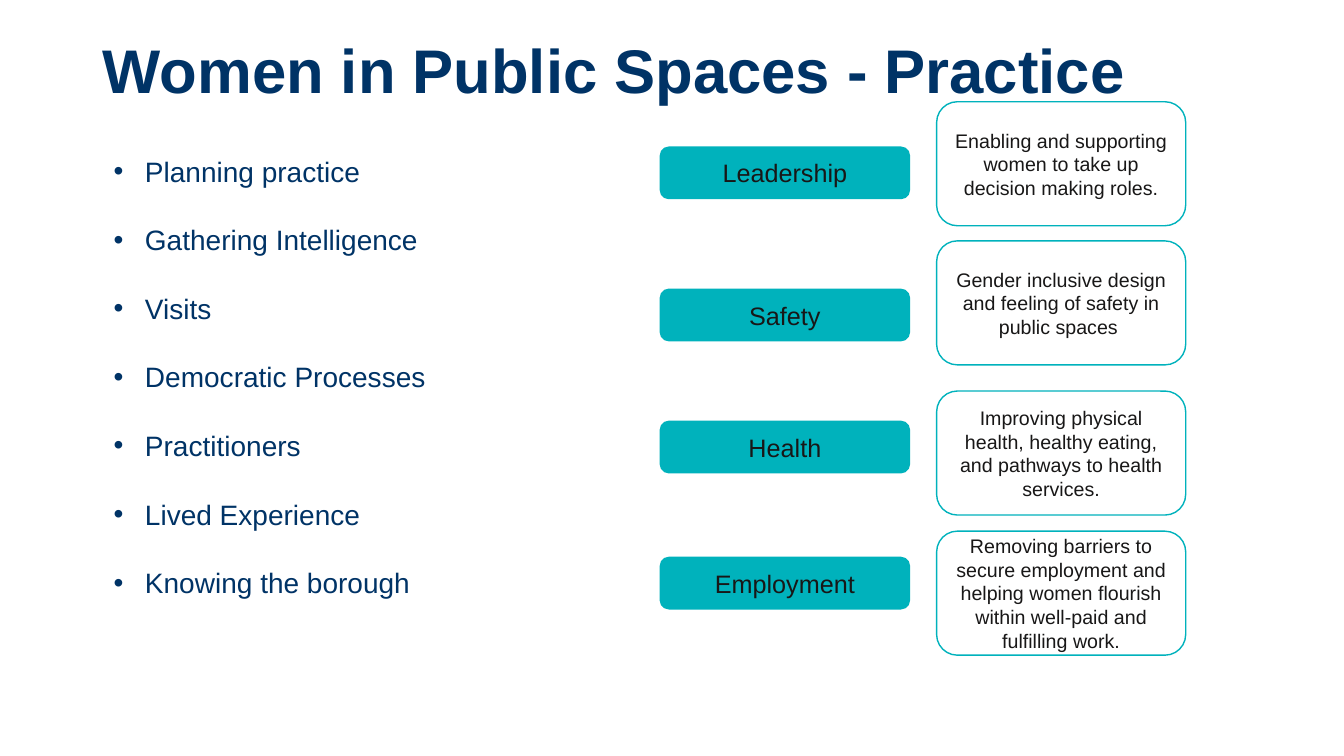
from dataclasses import dataclass

from lxml import etree
from pptx import Presentation
from pptx import util as u
from pptx.dml.color import RGBColor
from pptx.enum import shapes, text
from pptx.oxml.ns import qn

FONT = "Arial"
NAVY, TEAL, INK = "003366", "00B2BC", "181717"
LABEL_X, DETAIL_X, BOX_W = 6.55, 9.29, 2.47
LABEL_H, DETAIL_H = 0.51, 1.23


@dataclass(frozen=True)
class Theme:
    label: str
    label_top: float
    detail: str
    detail_top: float


THEMES = [
    Theme("Leadership", 1.46,
          "Enabling and supporting women to take up decision making roles.", 1.01),
    Theme("Safety", 2.87,
          "Gender inclusive design and feeling of safety in public spaces ", 2.39),
    Theme("Health", 4.18,
          "Improving physical health, healthy eating, and pathways to health services.", 3.88),
    Theme("Employment", 5.53,
          "Removing barriers to secure employment and helping women flourish "
          "within well-paid and fulfilling work.", 5.27),
]

PRACTICES = [
    "Planning practice", "Gathering Intelligence", "Visits", "Democratic Processes",
    "Practitioners", "Lived Experience", "Knowing the borough",
]


def rgb(color: str) -> RGBColor:
    return RGBColor.from_string(color)


def style_text(p, size: float, color: str, bold: bool = False) -> None:
    for r in p.runs:
        r.font.name = FONT
        r.font.size = u.Pt(size)
        r.font.bold = bold
        r.font.color.rgb = rgb(color)


def add_bullet(p, indent: float) -> None:
    """Give the paragraph a round bullet with a hanging indent."""
    pPr = p._p.get_or_add_pPr()
    pPr.set("marL", str(u.Inches(indent)))
    pPr.set("indent", str(-u.Inches(indent)))
    etree.SubElement(pPr, qn("a:buFont")).set("typeface", FONT)
    etree.SubElement(pPr, qn("a:buChar")).set("char", "•")


def add_title(s, title: str) -> None:
    tf = s.shapes.add_textbox(
        u.Inches(0.92), 0, u.Inches(10.69), u.Inches(1.45)).text_frame
    tf.word_wrap = True
    tf.vertical_anchor = text.MSO_ANCHOR.MIDDLE
    tf.text = title
    p = tf.paragraphs[0]
    p.line_spacing = 0.9
    style_text(p, 44, NAVY, bold=True)


def add_practices(s, practices: list[str]) -> None:
    tf = s.shapes.add_textbox(
        u.Inches(1.03), u.Inches(1.48), u.Inches(9.1), u.Inches(6)).text_frame
    tf.word_wrap = True
    tf.text = "\n".join(practices)
    for p in tf.paragraphs:
        p.space_after = u.Pt(25)
        add_bullet(p, 0.31)
        style_text(p, 20, NAVY)


def add_box(s, words: str, left: float, top: float, height: float,
            size: float, fill: str | None = None) -> None:
    sp = s.shapes.add_shape(
        shapes.MSO_SHAPE.ROUNDED_RECTANGLE,
        u.Inches(left), u.Inches(top), u.Inches(BOX_W), u.Inches(height))
    sp.shadow.inherit = False
    if fill:
        sp.fill.solid()
        sp.fill.fore_color.rgb = rgb(fill)
    else:
        sp.fill.background()
    sp.line.color.rgb = rgb(TEAL)
    sp.line.width = u.Pt(1)
    tf = sp.text_frame
    tf.word_wrap = True
    tf.vertical_anchor = text.MSO_ANCHOR.MIDDLE
    tf.text = words
    p = tf.paragraphs[0]
    p.alignment = text.PP_ALIGN.CENTER
    style_text(p, size, INK)


def main() -> None:
    prs = Presentation()
    prs.slide_width, prs.slide_height = u.Inches(13.33), u.Inches(7.5)
    s = prs.slides.add_slide(prs.slide_layouts[6])
    add_title(s, "Women in Public Spaces - Practice")
    add_practices(s, PRACTICES)
    for theme in THEMES:
        add_box(s, theme.label, LABEL_X, theme.label_top, LABEL_H, 18, TEAL)
        add_box(s, theme.detail, DETAIL_X, theme.detail_top, DETAIL_H, 14)
    prs.save("out.pptx")


if __name__ == "__main__":
    main()
